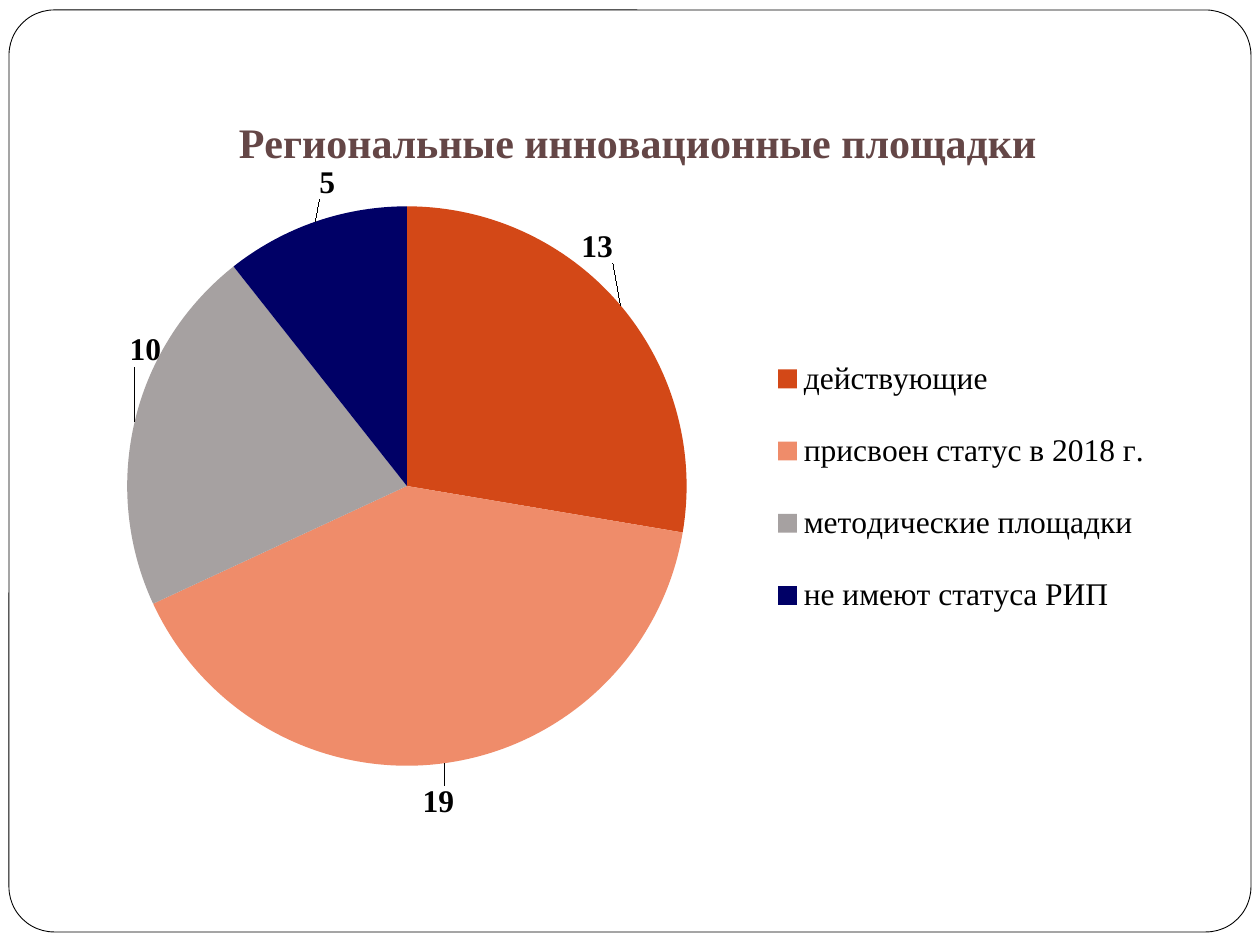
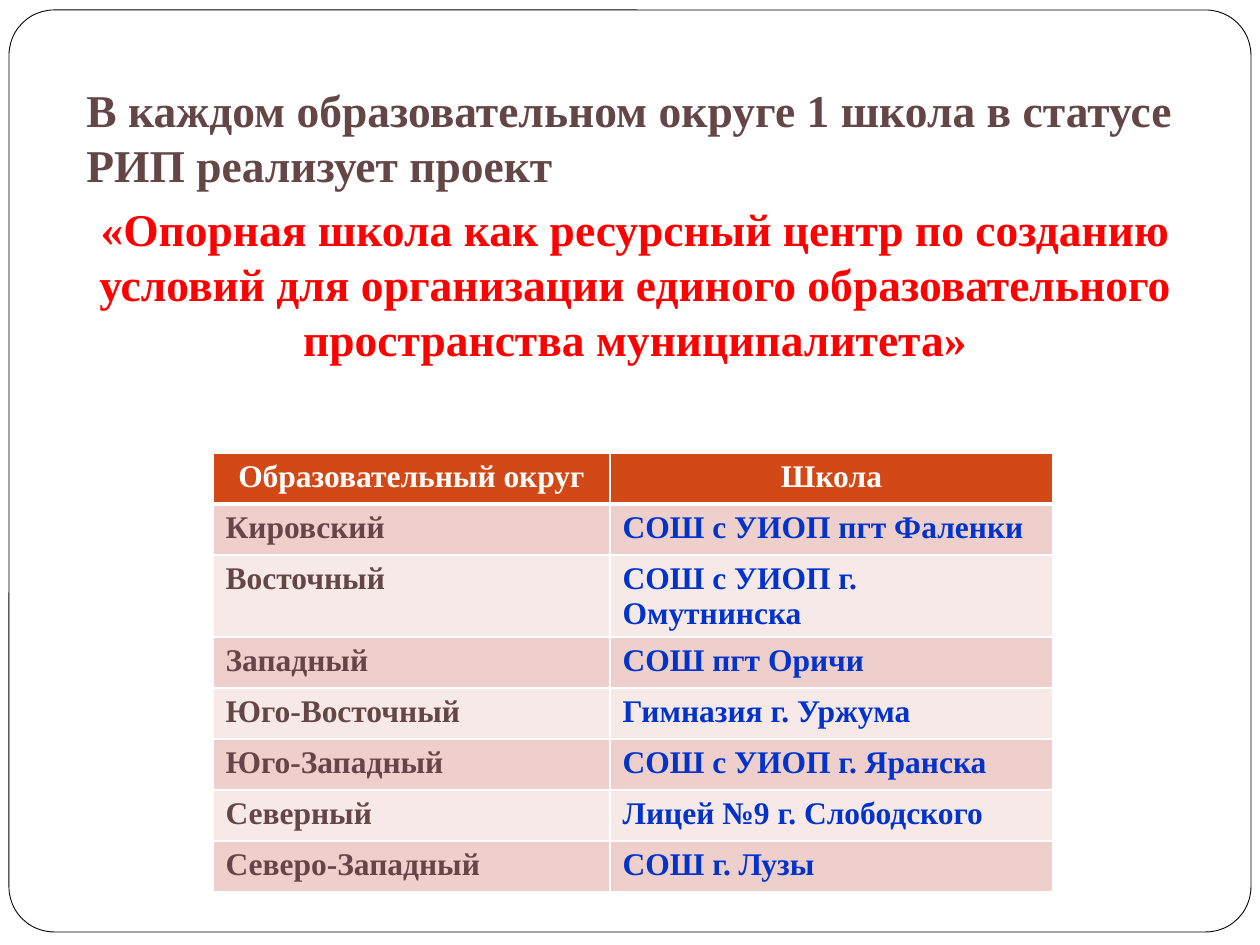
from lxml import etree
from pptx import Presentation
from pptx.chart.data import CategoryChartData
from pptx.dml.color import RGBColor
from pptx.enum.chart import XL_CHART_TYPE as ChartType
from pptx.enum.chart import XL_LABEL_POSITION as LabelPosition
from pptx.enum.chart import XL_LEGEND_POSITION as LegendPosition
from pptx.enum.shapes import MSO_SHAPE as Shape
from pptx.enum.text import PP_ALIGN as Align
from pptx.oxml.ns import qn
from pptx.util import Pt

EMU_PER_PX = 914400 / 126
FONT = "Times New Roman"
COLORS = {
    "white": "FFFFFF",
    "black": "000000",
    "heading": "644646",
    "red": "FF0000",
    "blue": "0033CC",
    "orange": "D34817",
    "salmon": "EF8C6A",
    "grey": "A6A1A1",
    "navy": "000066",
    "band_dark": "EFCFCC",
    "band_light": "F7E9E8",
}

CHART_TITLE = "Региональные инновационные площадки"
# category, value, colour, shift of its label as a share of the chart
SITES = [
    ("действующие", 13, "orange", (-0.04, -0.05)),
    ("присвоен статус в 2018 г.", 19, "salmon", (-0.02, 0.02)),
    ("методические площадки", 10, "grey", (0.03, -0.07)),
    ("не имеют статуса РИП", 5, "navy", (0.02, -0.02)),
]

PROJECT_TEXT = [
    ("В каждом образовательном округе 1 школа в статусе РИП реализует проект",
     "heading", Align.LEFT),
    ("«Опорная школа как ресурсный центр по созданию условий для организации "
     "единого образовательного пространства муниципалитета»",
     "red", Align.CENTER),
]
SCHOOLS = [
    ("Образовательный округ", "Школа"),
    ("Кировский", "СОШ с УИОП пгт Фаленки"),
    ("Восточный", "СОШ с УИОП г. Омутнинска"),
    ("Западный", "СОШ пгт Оричи"),
    ("Юго-Восточный", "Гимназия г. Уржума"),
    ("Юго-Западный", "СОШ с УИОП г. Яранска"),
    ("Северный", "Лицей №9 г. Слободского"),
    ("Северо-Западный", "СОШ г. Лузы"),
]


def px(*lengths):
    return [round(length * EMU_PER_PX) for length in lengths]


def rgb(name):
    return RGBColor.from_string(COLORS[name])


def fill_with(target, color):
    target.fill.solid()
    target.fill.fore_color.rgb = rgb(color)


def style_font(font, size, color, bold=False):
    font.name = FONT
    font.size = Pt(size)
    font.bold = bold
    font.color.rgb = rgb(color)


def add_run(paragraph, text, size, color):
    run = paragraph.add_run()
    run.text = text
    style_font(run.font, size, color, bold=True)


def add_framed_slide(presentation):
    slide = presentation.slides.add_slide(presentation.slide_layouts[6])
    frame = slide.shapes.add_shape(Shape.ROUNDED_RECTANGLE, *px(9, 10, 1242, 922))
    frame.adjustments[0] = 0.049
    frame.shadow.inherit = False
    fill_with(frame, "white")
    frame.line.color.rgb = rgb("black")
    frame.line.width = Pt(0.5)
    return slide


def place_by_hand(parent, index, **shares):
    """Give a chart part a manual layout, in shares of the chart, as child number index."""
    for old in parent.findall(qn("c:layout")):
        parent.remove(old)
    layout = etree.Element(qn("c:layout"))
    manual = etree.SubElement(layout, qn("c:manualLayout"))
    for tag, value in shares.items():
        etree.SubElement(manual, qn(f"c:{tag}"), val=str(value))
    parent.insert(index, layout)


def add_sites_pie(slide):
    data = CategoryChartData()
    data.categories = [site[0] for site in SITES]
    data.add_series(CHART_TITLE, [site[1] for site in SITES])
    chart = slide.shapes.add_chart(ChartType.PIE, *px(74, 86, 1123, 743), data).chart
    style_font(chart.font, 18, "black")
    from_edge = {"xMode": "edge", "yMode": "edge"}

    chart.has_title = True
    add_run(chart.chart_title.text_frame.paragraphs[0], CHART_TITLE, 24, "heading")
    place_by_hand(chart.chart_title._element, 1, **from_edge, x=0.14, y=0.03)

    chart.has_legend = True
    chart.legend.position = LegendPosition.RIGHT
    chart.legend.include_in_layout = False
    style_font(chart.legend.font, 18, "black")
    place_by_hand(chart.legend._element, 1, **from_edge, x=0.61, y=0.32, w=0.36, h=0.44)

    place_by_hand(chart._chartSpace.chart.plotArea, 0, layoutTarget="inner", **from_edge,
                  x=0.027, y=0.162, w=0.539, h=0.753)

    plot = chart.plots[0]
    plot.vary_by_categories = True
    series = plot.series[0]
    for index, (_, _, color, (shift_x, shift_y)) in enumerate(SITES):
        point = series.points[index]
        fill_with(point.format, color)
        label = point.data_label
        style_font(label.font, 18, "black", bold=True)
        label.position = LabelPosition.OUTSIDE_END
        place_by_hand(series.data_labels._element.dLbl_lst[index], 1, x=shift_x, y=shift_y)


def add_project_text(slide):
    text_frame = slide.shapes.add_textbox(*px(74, 76, 1123, 814)).text_frame
    text_frame.word_wrap = True
    for index, (text, color, alignment) in enumerate(PROJECT_TEXT):
        paragraph = text_frame.add_paragraph() if index else text_frame.paragraphs[0]
        paragraph.alignment = alignment
        paragraph.space_before = Pt(5.8)
        add_run(paragraph, text, 26, color)


def set_borders(cell, **widths):
    properties = cell._tc.get_or_add_tcPr()
    for position, (side, width) in enumerate(widths.items()):
        line = etree.Element(qn(f"a:ln{side}"), w=str(Pt(width)))
        solid = etree.SubElement(line, qn("a:solidFill"))
        etree.SubElement(solid, qn("a:srgbClr"), val=COLORS["white"])
        properties.insert(position, line)


def add_schools_table(slide):
    row_height = 51
    frame = slide.shapes.add_table(len(SCHOOLS), 2,
                                   *px(213, 453, 840, row_height * len(SCHOOLS)))
    table = frame.table
    for column, width in zip(table.columns, px(397, 443)):
        column.width = width
    for row_index, texts in enumerate(SCHOOLS):
        is_header = row_index == 0
        band = "band_dark" if row_index % 2 else "band_light"
        for column_index, text in enumerate(texts):
            cell = table.cell(row_index, column_index)
            cell.margin_bottom = 0
            fill_with(cell, "orange" if is_header else band)
            set_borders(cell, L=1, R=1, T=3 if row_index == 1 else 1,
                        B=3 if is_header else 1)
            paragraph = cell.text_frame.paragraphs[0]
            paragraph.alignment = Align.CENTER if is_header else Align.LEFT
            body_color = ("heading", "blue")[column_index]
            add_run(paragraph, text, 18, "white" if is_header else body_color)


def main():
    presentation = Presentation()
    presentation.slide_width, presentation.slide_height = px(1260, 945)
    add_sites_pie(add_framed_slide(presentation))
    project_slide = add_framed_slide(presentation)
    add_project_text(project_slide)
    add_schools_table(project_slide)
    presentation.save("out.pptx")


if __name__ == "__main__":
    main()
